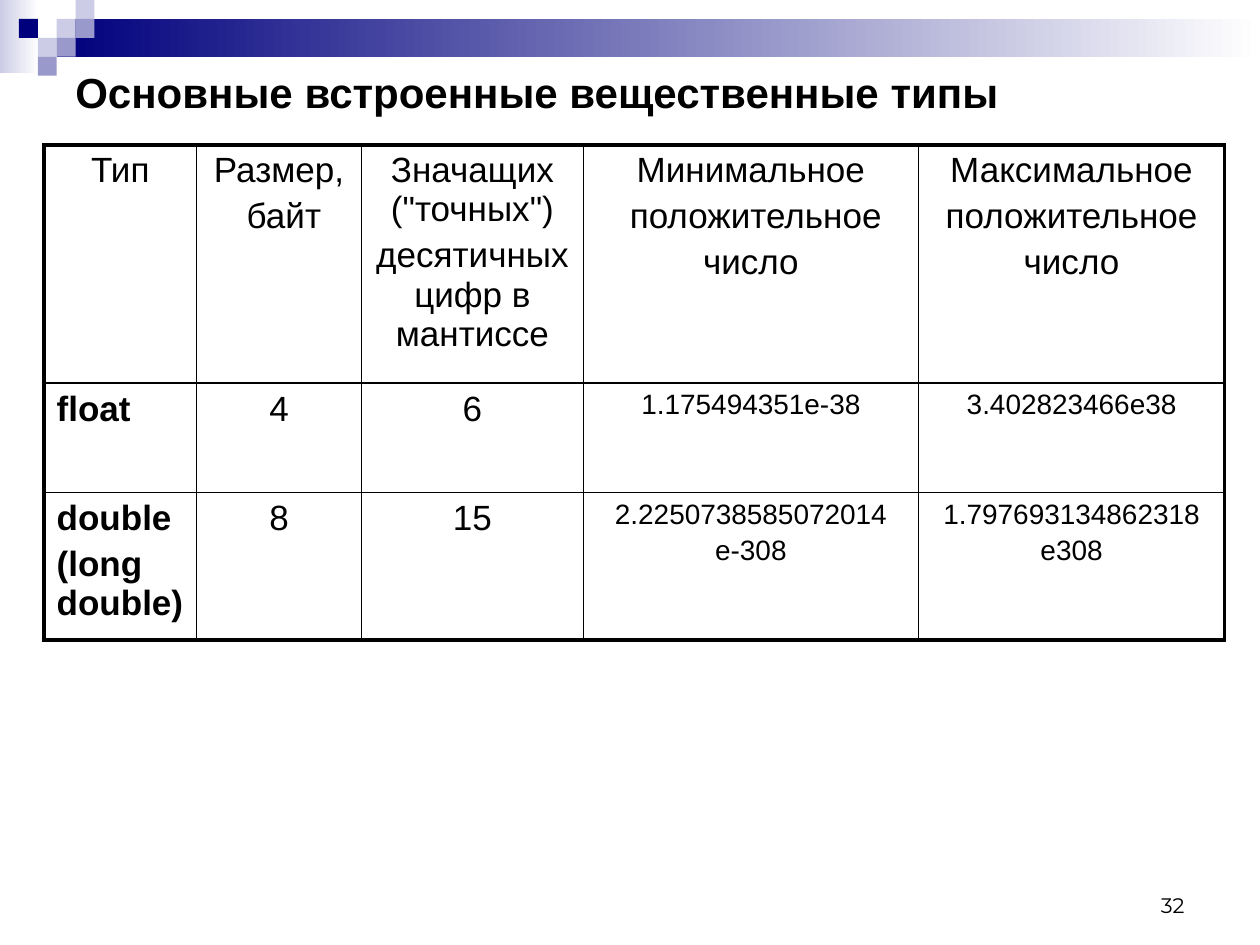
from lxml.etree import SubElement
from pptx import Presentation
from pptx.dml.color import RGBColor
from pptx.enum.shapes import MSO_SHAPE as Shape
from pptx.enum.text import MSO_ANCHOR as Anchor, PP_ALIGN as Align
from pptx.oxml.ns import qn
from pptx.util import Inches, Pt

NAVY, LILAC, LAVENDER, WHITE, BLACK = "00007D", "9999CC", "CCCCE6", "FFFFFF", "000000"
TITLE = "Основные встроенные вещественные типы"
PAGE_NUMBER = "32"
GRADIENT_BARS = [
    (0, 0, 0.31, 0.58, LAVENDER),
    (0.45, 0.15, 9.55, 0.3, NAVY),
]
UNIT = 0.15
SQUARES = [
    (3, 1, LAVENDER), (4, 0, LAVENDER), (4, 1, LILAC), (2, 2, LAVENDER),
    (1, 1, NAVY), (3, 2, LILAC), (2, 3, LILAC),
]
TABLE_LEFT, TABLE_TOP = 0.35, 1.15
COLUMN_WIDTHS = [1.21, 1.31, 1.76, 2.66, 2.43]
ROW_HEIGHTS = [1.89, 0.87, 1.17]
ROWS = [
    [["Тип"], ["Размер,", " байт"],
     ['Значащих ("точных")', "десятичных цифр в мантиссе"],
     ["Минимальное", " положительное", "число"],
     ["Максимальное", "положительное", "число"]],
    [["float"], ["4"], ["6"], ["1.175494351е-38"], ["3.402823466е38"]],
    [["double", "(long double)"], ["8"], ["15"],
     ["2.2250738585072014", "е-308"], ["1.797693134862318", "e308"]],
]
THIN, THICK = 1, 2.25


def color(value):
    return RGBColor.from_string(value)


def add_rectangle(slide, left, top, width, height, fill, fade_to=None):
    shape = slide.shapes.add_shape(
        Shape.RECTANGLE, Inches(left), Inches(top), Inches(width), Inches(height))
    shape.shadow.inherit = False
    shape.line.fill.background()
    if fade_to:
        shape.fill.gradient()
        shape.fill.gradient_angle = 0
        for stop, value in zip(shape.fill.gradient_stops, (fill, fade_to)):
            stop.color.rgb = color(value)
    else:
        shape.fill.solid()
        shape.fill.fore_color.rgb = color(fill)


def write(frame, lines, size, align, bold=False, font="Arial"):
    for index, line in enumerate(lines):
        paragraph = frame.add_paragraph() if index else frame.paragraphs[0]
        paragraph.alignment = align
        if index:
            paragraph.space_before = Pt(size * 0.2)
        run = paragraph.add_run()
        run.text = line
        run.font.name, run.font.size, run.font.bold = font, Pt(size), bold
        run.font.color.rgb = color(BLACK)


def add_text(slide, left, top, width, height, anchor, text, *style):
    box = slide.shapes.add_textbox(
        Inches(left), Inches(top), Inches(width), Inches(height))
    box.text_frame.word_wrap = True
    box.text_frame.vertical_anchor = anchor
    write(box.text_frame, [text], *style)


def set_borders(cell, widths):
    properties = cell._tc.get_or_add_tcPr()
    for side, width in widths.items():
        line = SubElement(properties, qn(f"a:ln{side}"), w=str(Pt(width)))
        fill = SubElement(line, qn("a:solidFill"))
        SubElement(fill, qn("a:srgbClr"), val=BLACK)


def add_types_table(slide):
    table = slide.shapes.add_table(
        len(ROWS), len(COLUMN_WIDTHS), Inches(TABLE_LEFT), Inches(TABLE_TOP),
        Inches(sum(COLUMN_WIDTHS)), Inches(sum(ROW_HEIGHTS))).table
    table.first_row = table.horz_banding = False
    for column, width in zip(table.columns, COLUMN_WIDTHS):
        column.width = Inches(width)
    for row, height in zip(table.rows, ROW_HEIGHTS):
        row.height = Inches(height)
    last_row, last_column = len(ROWS) - 1, len(COLUMN_WIDTHS) - 1
    for r, row in enumerate(ROWS):
        for c, lines in enumerate(row):
            cell = table.cell(r, c)
            set_borders(cell, {
                "L": THICK if c == 0 else THIN,
                "R": THICK if c == last_column else THIN,
                "T": THICK if r == 0 else THIN,
                "B": THICK if r == last_row else THIN,
            })
            cell.fill.background()
            type_name = r > 0 and c == 0
            size = 16 if r > 0 and c >= 3 else 20
            write(cell.text_frame, lines, size,
                  Align.LEFT if type_name else Align.CENTER, type_name)


def main():
    presentation = Presentation()
    presentation.slide_width, presentation.slide_height = Inches(10), Inches(7.5)
    slide = presentation.slides.add_slide(presentation.slide_layouts[6])
    for *place, fill in GRADIENT_BARS:
        add_rectangle(slide, *place, fill, WHITE)
    for column, row, fill in SQUARES:
        add_rectangle(slide, column * UNIT, row * UNIT, UNIT, UNIT, fill)
    add_text(slide, 7.17, 6.83, 2.33, 0.5, Anchor.BOTTOM,
             PAGE_NUMBER, 12, Align.RIGHT, False, "Montserrat")
    add_text(slide, 0.5, 0.3, 9.07, 0.85, Anchor.MIDDLE,
             TITLE, 24, Align.LEFT, True)
    add_types_table(slide)
    presentation.save("out.pptx")


if __name__ == "__main__":
    main()
